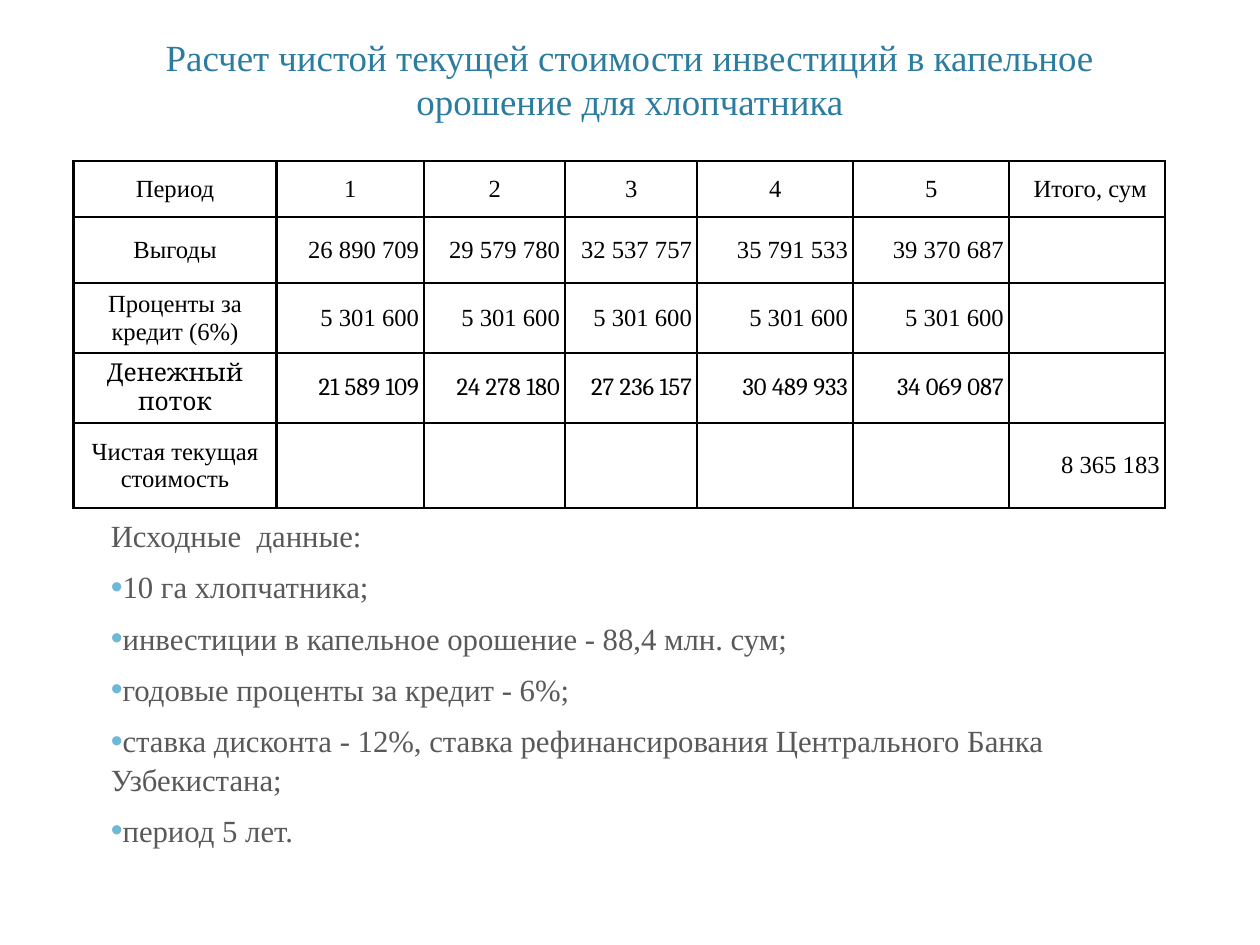
from dataclasses import dataclass

from lxml.etree import SubElement as add_sub
from pptx import Presentation
from pptx.dml.color import RGBColor
from pptx.enum.text import MSO_ANCHOR as Anchor, PP_ALIGN as Align
from pptx.oxml.ns import qn
from pptx.util import Emu, Pt

SCALE = 9144
SERIF = "Times New Roman"
BLACK = RGBColor(0x00, 0x00, 0x00)
TEAL = RGBColor(0x2C, 0x7C, 0x9F)
GREY = RGBColor(0x59, 0x59, 0x59)
SKY = RGBColor(0x6F, 0xB7, 0xD7)


@dataclass(frozen=True)
class Box:
    left: int
    top: int
    width: int
    height: int
    anchor: Anchor


@dataclass(frozen=True)
class Row:
    height: int
    label: str
    values: tuple[str, ...]
    align: Align = Align.RIGHT
    font: str = SERIF


TITLE = "Расчет чистой текущей стоимости инвестиций в капельное орошение для хлопчатника"
HEADING = "Исходные  данные:"
FACTS = (
    "10 га хлопчатника;",
    "инвестиции в капельное орошение - 88,4 млн. сум;",
    "годовые проценты за кредит - 6%;",
    "ставка дисконта - 12%, ставка рефинансирования Центрального Банка Узбекистана;",
    "период 5 лет.",
)
WIDTHS = (229, 167, 159, 149, 176, 176, 176)
ROWS = (
    Row(63, "Период", ("1", "2", "3", "4", "5", " Итого, сум"), Align.CENTER),
    Row(75, "Выгоды", ("26 890 709", "29 579 780", "32 537 757", "35 791 533", "39 370 687", "")),
    Row(76, "Проценты за кредит (6%)", ("5 301 600",) * 5 + ("",)),
    Row(76, "Денежный поток",
        ("21 589 109", "24 278 180", "27 236 157", "30 489 933", "34 069 087", ""),
        font="Cambria"),
    Row(96, "Чистая текущая стоимость", ("",) * 5 + ("8 365 183",)),
)


def px(value: int) -> Emu:
    return Emu(value * SCALE)


def style(para, size: int, color: RGBColor, align: Align, name: str = SERIF) -> None:
    para.alignment = align
    para.font.size = Pt(size)
    para.font.name = name
    para.font.color.rgb = color


def add_box(slide, box: Box):
    shape = slide.shapes.add_textbox(px(box.left), px(box.top), px(box.width), px(box.height))
    frame = shape.text_frame
    frame.word_wrap = True
    frame.vertical_anchor = box.anchor
    frame.margin_left = frame.margin_right = px(14)
    frame.margin_top = frame.margin_bottom = px(7)
    return frame


def add_dot(para) -> None:
    props = para._p.get_or_add_pPr()
    color = add_sub(props, qn("a:buClr"))
    add_sub(color, qn("a:srgbClr"), val=str(SKY))
    add_sub(props, qn("a:buSzPct"), val="110000")
    add_sub(props, qn("a:buFont"), typeface="Arial")
    add_sub(props, qn("a:buChar"), char="•")


def add_facts(slide) -> None:
    frame = add_box(slide, Box(82, 575, 1235, 579, Anchor.TOP))
    frame.text = "\n".join((HEADING, *FACTS))
    for index, para in enumerate(frame.paragraphs):
        style(para, 25, GREY, Align.LEFT)
        para.line_spacing = 1.04
        props = para._p.get_or_add_pPr()
        props.set("marL", str(px(29)))
        props.set("indent", "0")
        if index:
            para.space_before = Pt(10.5)
            add_dot(para)


def add_edges(cell) -> None:
    props = cell._tc.get_or_add_tcPr()
    for index, side in enumerate(("lnL", "lnR", "lnT", "lnB")):
        line = props.makeelement(qn(f"a:{side}"), {"w": str(Pt(2))})
        fill = add_sub(line, qn("a:solidFill"))
        add_sub(fill, qn("a:srgbClr"), val=str(BLACK))
        props.insert(index, line)


def fill_cell(cell, text: str, align: Align, font: str) -> None:
    cell.text = text
    cell.fill.background()
    cell.vertical_anchor = Anchor.MIDDLE
    cell.margin_left = cell.margin_right = px(6)
    cell.margin_top = cell.margin_bottom = px(6)
    style(cell.text_frame.paragraphs[0], 20, BLACK, align, font)
    add_edges(cell)


def add_grid(slide) -> None:
    height = sum(row.height for row in ROWS)
    table = slide.shapes.add_table(
        len(ROWS), len(WIDTHS), px(83), px(182), px(sum(WIDTHS)), px(height)
    ).table
    table.first_row = table.horz_banding = False
    for column, width in zip(table.columns, WIDTHS):
        column.width = px(width)
    for line, row in zip(table.rows, ROWS):
        line.height = px(row.height)
        for index, text in enumerate((row.label, *row.values)):
            align = row.align if index else Align.CENTER
            fill_cell(line.cells[index], text, align, row.font)


def main() -> None:
    deck = Presentation()
    deck.slide_width, deck.slide_height = px(1422), px(1067)
    slide = deck.slides.add_slide(deck.slide_layouts[6])
    title = add_box(slide, Box(139, 28, 1144, 118, Anchor.BOTTOM))
    title.text = TITLE
    style(title.paragraphs[0], 30, TEAL, Align.CENTER)
    add_facts(slide)
    add_grid(slide)
    deck.save("out.pptx")


if __name__ == "__main__":
    main()
